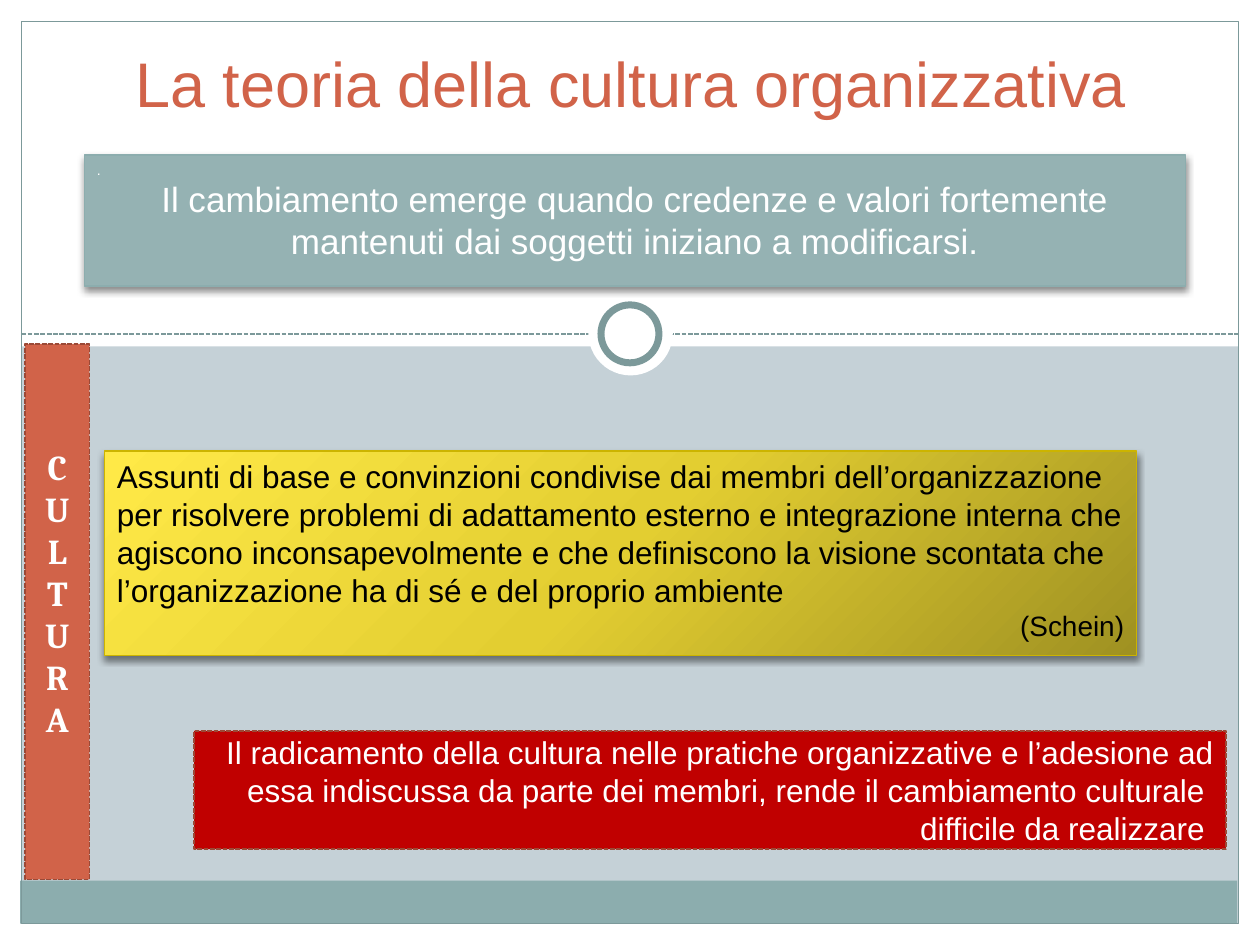
from typing import NamedTuple, Optional

from lxml.etree import SubElement
from pptx import Presentation
from pptx.dml.color import RGBColor
from pptx.enum.dml import MSO_LINE
from pptx.enum.shapes import MSO_CONNECTOR, MSO_SHAPE
from pptx.enum.text import MSO_ANCHOR, PP_ALIGN
from pptx.oxml.ns import qn
from pptx.util import Inches, Pt

WHITE, TEAL, RUST = "FFFFFF", "7C999A", "D16349"
RUST_EDGE = "9B4936"
RECT, OVAL = MSO_SHAPE.RECTANGLE, MSO_SHAPE.OVAL
LEFT, CENTER, RIGHT = PP_ALIGN.LEFT, PP_ALIGN.CENTER, PP_ALIGN.RIGHT


class Panel(NamedTuple):
    left: float
    top: float
    width: float
    height: float
    fill: Optional[str] = None
    line: Optional[str] = None
    weight: float = 0.75
    dashed: bool = False
    kind: MSO_SHAPE = RECT


def rgb(value: str) -> RGBColor:
    return RGBColor.from_string(value)


def set_line(line, color: str, weight: float, dashed: bool) -> None:
    line.color.rgb = rgb(color)
    line.width = Pt(weight)
    if dashed:
        line.dash_style = MSO_LINE.SQUARE_DOT


def draw(slide, panel: Panel):
    shape = slide.shapes.add_shape(
        panel.kind, Inches(panel.left), Inches(panel.top),
        Inches(panel.width), Inches(panel.height))
    shape.shadow.inherit = False
    if panel.fill:
        shape.fill.solid()
        shape.fill.fore_color.rgb = rgb(panel.fill)
    else:
        shape.fill.background()
    if panel.line:
        set_line(shape.line, panel.line, panel.weight, panel.dashed)
    else:
        shape.line.fill.background()
    return shape


def add_color(parent, value: str):
    return SubElement(parent, qn("a:srgbClr"), val=value)


def cast_shadow(shape) -> None:
    """Add a soft shadow that falls straight down."""
    effects = shape._element.spPr.find(qn("a:effectLst"))
    shadow = SubElement(effects, qn("a:outerShdw"), blurRad=str(Pt(4)),
                        dist=str(Pt(2)), dir="5400000", algn="ctr",
                        rotWithShape="0")
    SubElement(add_color(shadow, "000000"), qn("a:alpha"), val="45000")


def fill_gradient(shape, stops: dict[int, str], angle: float) -> None:
    """Fill with colours keyed by percent; the angle runs counter-clockwise."""
    shape.fill.gradient()
    shape.fill.gradient_angle = angle
    stop_list = shape._element.spPr.find(qn("a:gradFill")).find(qn("a:gsLst"))
    for old_stop in list(stop_list):
        stop_list.remove(old_stop)
    for percent, color in stops.items():
        add_color(SubElement(stop_list, qn("a:gs"), pos=str(percent * 1000)), color)


def write(shape, text: str, *, size: float, color: str = WHITE,
          font: str = "Arial", bold: bool = False, align=LEFT,
          anchor=MSO_ANCHOR.TOP) -> None:
    """Add a paragraph, using the first one while it is still empty."""
    frame = shape.text_frame
    frame.word_wrap = True
    frame.vertical_anchor = anchor
    paragraph = frame.add_paragraph() if frame.text else frame.paragraphs[0]
    paragraph.alignment = align
    run = paragraph.add_run()
    run.text = text
    run.font.size = Pt(size)
    run.font.name = font
    run.font.bold = bold
    run.font.color.rgb = rgb(color)


def draw_divider(slide) -> None:
    divider = slide.shapes.add_connector(
        MSO_CONNECTOR.STRAIGHT, Inches(0.17), Inches(2.65), Inches(9.83), Inches(2.65))
    set_line(divider.line, TEAL, 0.9, True)
    SubElement(divider._element.spPr, qn("a:effectLst"))


def draw_background(slide) -> None:
    slide.background.fill.solid()
    slide.background.fill.fore_color.rgb = rgb("C5D1D7")
    for panel in (
        Panel(0, 7.33, 10, 0.17, WHITE),
        Panel(9.83, 0, 0.17, 7.5, WHITE),
        Panel(0, 0, 0.17, 7.5, WHITE),
        Panel(0, 0, 10, 2.75, WHITE),
        Panel(0.16, 6.99, 9.66, 0.34, "8CADAE"),
    ):
        draw(slide, panel)
    draw_divider(slide)
    for panel in (
        Panel(0.17, 0.17, 9.66, 7.16, line=TEAL),
        Panel(4.67, 2.31, 0.67, 0.67, WHITE, kind=OVAL),
        Panel(4.77, 2.42, 0.46, 0.46, WHITE, TEAL, 4, kind=OVAL),
    ):
        draw(slide, panel)


def draw_content(slide) -> None:
    title = slide.shapes.add_textbox(Inches(0.2), Inches(0.21), Inches(9.61), Inches(0.79))
    write(title, "La teoria della cultura organizzativa", size=36, color=RUST,
          align=CENTER, anchor=MSO_ANCHOR.BOTTOM)

    change = draw(slide, Panel(0.67, 1.23, 8.74, 1.04, "95B2B3", "8CADAE"))
    cast_shadow(change)
    write(change, ".", size=8)
    write(change, "Il cambiamento emerge quando credenze e valori fortemente "
          "mantenuti dai soggetti iniziano a modificarsi.", size=20, align=CENTER)

    culture = draw(slide, Panel(0.2, 2.73, 0.51, 4.25, RUST, RUST_EDGE, 0.9, True))
    culture.text_frame.margin_bottom = Inches(0.35)
    for letter in "CULTURA":
        write(culture, letter, size=20, font="Cambria", bold=True,
              align=CENTER, anchor=MSO_ANCHOR.MIDDLE)

    definition = draw(slide, Panel(0.83, 3.58, 8.19, 1.62, line="CCB400"))
    fill_gradient(definition, {0: "9F9122", 50: "E3CE31", 100: "FFE947"}, 135)
    cast_shadow(definition)
    write(definition, "Assunti di base e convinzioni condivise dai membri "
          "dell’organizzazione per risolvere problemi di adattamento esterno e "
          "integrazione interna che agiscono inconsapevolmente e che definiscono "
          "la visione scontata che l’organizzazione ha di sé e del proprio ambiente",
          size=18, color="000000")
    write(definition, "(Schein)", size=16, color="000000", align=RIGHT)

    rooting = draw(slide, Panel(1.54, 5.8, 8.19, 0.94, "C00000", RUST_EDGE, 0.9, True))
    write(rooting, "Il radicamento della cultura nelle pratiche organizzative e "
          "l’adesione ad essa indiscussa da parte dei membri, rende il cambiamento "
          "culturale  difficile da realizzare ", size=18, align=RIGHT,
          anchor=MSO_ANCHOR.MIDDLE)


def main() -> None:
    deck = Presentation()
    deck.slide_width, deck.slide_height = Inches(10), Inches(7.5)
    slide = deck.slides.add_slide(deck.slide_layouts[6])
    draw_background(slide)
    draw_content(slide)
    deck.save("out.pptx")


if __name__ == "__main__":
    main()
